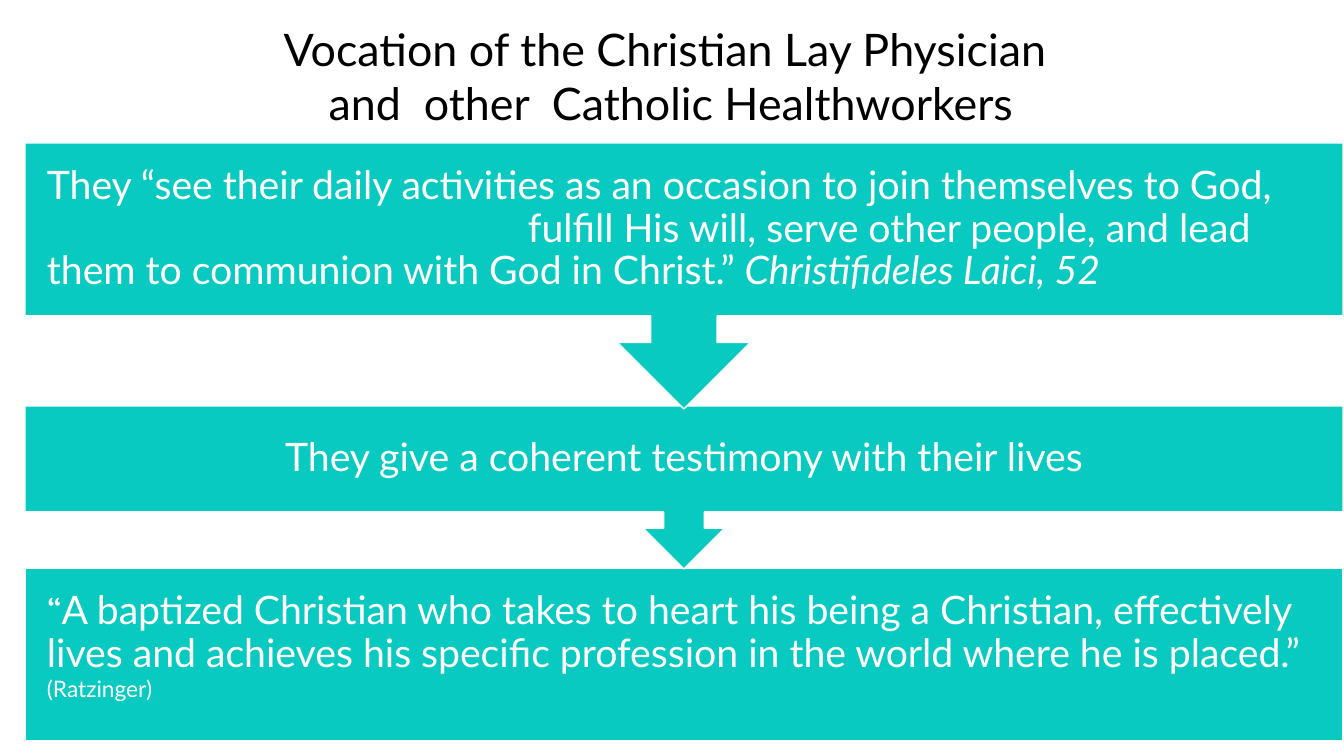
"""Build the slide on the vocation of Christian health workers."""
import pptx
import pptx.dml.color
import pptx.enum.shapes
import pptx.enum.text
import pptx.util

EMU_PER_PX = 914400 / 100.8
COLOURS = {"teal": "08CAC1", "white": "FFFFFF", "black": "000000"}
FONT = "Lato"
BAND_LEFT, BAND_WIDTH, BAND_INSET = 25, 1318, 22
SHAPES = pptx.enum.shapes.MSO_SHAPE
ALIGN = pptx.enum.text.PP_ALIGN
ANCHOR = pptx.enum.text.MSO_ANCHOR


def px(length):
    return pptx.util.Emu(round(length * EMU_PER_PX))


def colour(name):
    return pptx.dml.color.RGBColor.from_string(COLOURS[name])


def add_run(paragraph, text, size=28, colour_name="white", font=FONT, italic=False):
    run = paragraph.add_run()
    run.text = text
    run.font.size = pptx.util.Pt(size)
    run.font.name = font
    run.font.italic = italic
    run.font.color.rgb = colour(colour_name)
    return run


def format_paragraph(paragraph, alignment=ALIGN.LEFT, first_indent=0):
    paragraph.alignment = alignment
    paragraph.line_spacing = 0.9
    if first_indent:
        properties = paragraph._p.get_or_add_pPr()
        properties.set("marL", "0")
        properties.set("indent", str(px(first_indent)))
    return paragraph


def add_band(slide, kind, top, height):
    shape = slide.shapes.add_shape(kind, px(BAND_LEFT), px(top), px(BAND_WIDTH), px(height))
    shape.shadow.inherit = False
    shape.fill.solid()
    shape.fill.fore_color.rgb = colour("teal")
    shape.line.color.rgb = colour("white")
    shape.line.width = pptx.util.Pt(1)
    frame = shape.text_frame
    frame.word_wrap = True
    frame.vertical_anchor = ANCHOR.MIDDLE
    for side in ("left", "top", "right", "bottom"):
        setattr(frame, f"margin_{side}", px(BAND_INSET))
    return shape


def add_callout(slide, top, height):
    shape = add_band(slide, SHAPES.DOWN_ARROW_CALLOUT, top, height)
    for index, value in enumerate((0.25, 0.25, 0.25, 0.65)):
        shape.adjustments[index] = value
    return shape


def set_title(slide):
    title = slide.shapes.title
    title.left, title.top, title.width, title.height = px(16), px(17), px(1310), px(119)
    frame = title.text_frame
    frame.auto_size = pptx.enum.text.MSO_AUTO_SIZE.NONE
    frame.vertical_anchor = ANCHOR.TOP
    paragraph = frame.paragraphs[0]
    paragraph.alignment = ALIGN.CENTER
    add_run(paragraph, "Vocation of the Christian Lay Physician ", 32, "black")
    paragraph.add_line_break()
    add_run(paragraph, "and  other  Catholic Healthworkers", 32, "black")


def main():
    presentation = pptx.Presentation()
    presentation.slide_width, presentation.slide_height = px(1344), px(756)
    slide = presentation.slides.add_slide(presentation.slide_layouts[5])
    set_title(slide)

    profession = add_band(slide, SHAPES.RECTANGLE, 568, 173)
    paragraph = format_paragraph(profession.text_frame.paragraphs[0])
    add_run(paragraph, "“", font="Cambria")
    add_run(paragraph, "A baptized Christian who takes to heart his being a Christian, "
            "effectively lives and achieves his specific profession in the world "
            "where he is placed.”")
    source = add_run(paragraph, " (Ratzinger)")
    source.font._element.set("baseline", "30000")

    testimony = add_callout(slide, 406, 163)
    paragraph = format_paragraph(testimony.text_frame.paragraphs[0], ALIGN.CENTER)
    add_run(paragraph, "They give a coherent testimony with their lives")

    activities = add_callout(slide, 143, 266)
    paragraph = format_paragraph(activities.text_frame.paragraphs[0])
    add_run(paragraph, "They “see their daily activities as an occasion to join "
            "themselves to God,")
    paragraph = format_paragraph(activities.text_frame.add_paragraph(), first_indent=481)
    add_run(paragraph, "fulfill His will, serve other people, and lead them to "
            "communion with God in Christ.” ")
    add_run(paragraph, "Christifideles Laici, 52", italic=True)

    presentation.save("out.pptx")


if __name__ == "__main__":
    main()
